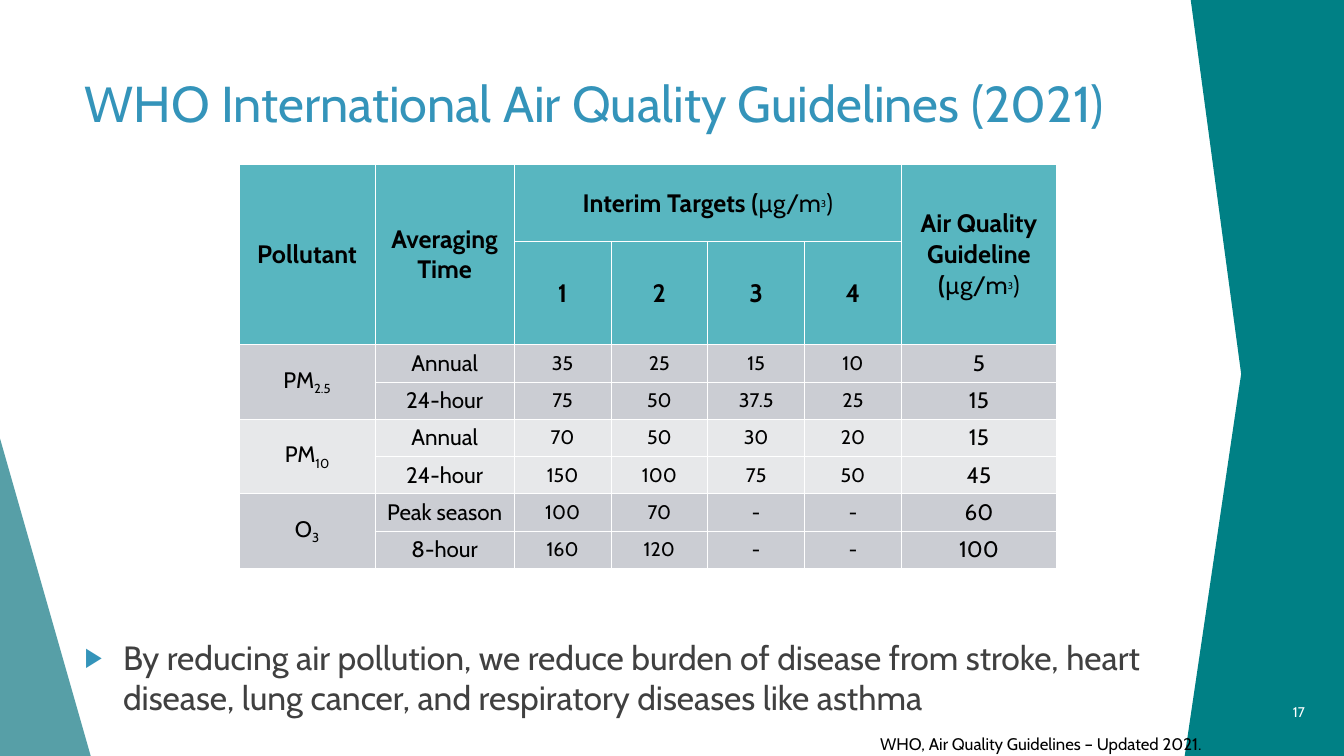
from lxml.etree import SubElement
from pptx import Presentation
from pptx.dml.color import RGBColor
from pptx.enum.shapes import MSO_SHAPE
from pptx.enum.text import MSO_ANCHOR, MSO_AUTO_SIZE, PP_ALIGN
from pptx.oxml.ns import qn
from pptx.util import Inches, Pt

FONT = "Cabin"
BLUE = RGBColor(0x34, 0x94, 0xBA)
TEAL = RGBColor(0x00, 0x80, 0x85)
SOFT_TEAL = RGBColor(0x3A, 0x8F, 0x98)
HEADER = RGBColor(0x58, 0xB6, 0xC0)
GREY = RGBColor(0xCB, 0xCD, 0xD3)
LIGHT_GREY = RGBColor(0xE7, 0xE8, 0xEA)
DARK = RGBColor(0x40, 0x40, 0x40)
BLACK = RGBColor(0, 0, 0)
WHITE = RGBColor(0xFF, 0xFF, 0xFF)

COL_WIDTHS = [1.35, 1.38, 0.96, 0.96, 0.96, 0.96, 1.54]
ROW_HEIGHTS = [0.77, 1.02] + [0.37] * 6
VALUE_SIZES = [16] + [14] * 4 + [16]
POLLUTANTS = [
    ("PM", "2.5", GREY, [["Annual", "35", "25", "15", "10", "5"],
                         ["24-hour", "75", "50", "37.5", "25", "15"]]),
    ("PM", "10", LIGHT_GREY, [["Annual", "70", "50", "30", "20", "15"],
                              ["24-hour", "150", "100", "75", "50", "45"]]),
    ("O", "3", GREY, [["Peak season", "100", "70", "-", "-", "60"],
                      ["8-hour", "160", "120", "-", "-", "100"]]),
]


def style_run(r, size, color, bold=False, baseline=0):
    r.font.name = FONT
    r.font.size = Pt(size)
    r.font.color.rgb = color
    r.font.bold = bold
    if baseline:
        r.font._element.set("baseline", str(baseline * 1000))


def place(shape, left, top, width, height):
    shape.left, shape.top = Inches(left), Inches(top)
    shape.width, shape.height = Inches(width), Inches(height)


def fill_text(shape, text, size, color, anchor=MSO_ANCHOR.TOP, align=PP_ALIGN.LEFT):
    tf = shape.text_frame
    tf.text = text
    tf.word_wrap = True
    tf.auto_size = MSO_AUTO_SIZE.NONE
    tf.vertical_anchor = anchor
    p = tf.paragraphs[0]
    p.alignment = align
    p.space_before = Pt(0)
    style_run(p.runs[0], size, color)
    return p


def add_label(s, box, *text_format):
    fill_text(s.shapes.add_textbox(*map(Inches, box)), *text_format)


def set_bullet(p, char, color, percent, indent):
    pPr = p._p.get_or_add_pPr()
    pPr.set("marL", str(Inches(indent)))
    pPr.set("indent", str(-Inches(indent)))
    clr = SubElement(pPr, qn("a:buClr"))
    SubElement(clr, qn("a:srgbClr"), val=str(color))
    SubElement(pPr, qn("a:buSzPct"), val=str(percent * 1000))
    SubElement(pPr, qn("a:buFont"), typeface="Arial")
    SubElement(pPr, qn("a:buChar"), char=char)


def send_behind(shape, front, color):
    """Colour a decoration and put it below the front shape."""
    shape.shadow.inherit = False
    shape.fill.solid()
    shape.fill.fore_color.rgb = color
    shape.line.fill.background()
    front._element.addprevious(shape._element)


def add_decorations(s):
    wedge = s.shapes.add_shape(MSO_SHAPE.ISOSCELES_TRIANGLE, Inches(-0.02), Inches(4.28),
                               Inches(0.92), Inches(3.22))
    wedge.adjustments[0] = 0
    send_behind(wedge, s.shapes.title, SOFT_TEAL)
    tint = wedge._element.spPr.find(qn("a:solidFill"))[0]
    SubElement(tint, qn("a:alpha"), val="85000")

    outline = [(13.33, 0), (13.33, 7.5), (11.75, 7.5), (12.31, 3.71), (11.81, 0)]
    start, *rest = [(Inches(x), Inches(y)) for x, y in outline]
    builder = s.shapes.build_freeform(*start)
    builder.add_line_segments(rest)
    send_behind(builder.convert_to_shape(), s.shapes.title, TEAL)


def set_borders(cell):
    tcPr = cell._tc.get_or_add_tcPr()
    for i, side in enumerate(("lnL", "lnR", "lnT", "lnB")):
        ln = SubElement(tcPr, qn(f"a:{side}"), w=str(Pt(0.67)))
        fill = SubElement(ln, qn("a:solidFill"))
        SubElement(fill, qn("a:srgbClr"), val=str(WHITE))
        tcPr.insert(i, ln)


def fill_cell(cell, *parts):
    """Write runs given as (text, size, bold, baseline)."""
    cell.vertical_anchor = MSO_ANCHOR.MIDDLE
    p = cell.text_frame.paragraphs[0]
    p.alignment = PP_ALIGN.CENTER
    for text, size, *rest in parts:
        r = p.add_run()
        r.text = text
        style_run(r, size, BLACK, *rest)


def add_guideline_table(s):
    frame = s.shapes.add_table(len(ROW_HEIGHTS), len(COL_WIDTHS), Inches(2.37), Inches(1.63),
                               Inches(sum(COL_WIDTHS)), Inches(sum(ROW_HEIGHTS)))
    table = frame.table
    table.first_row = table.horz_banding = False
    for col, width in zip(table.columns, COL_WIDTHS):
        col.width = Inches(width)
    for row, height in zip(table.rows, ROW_HEIGHTS):
        row.height = Inches(height)

    row_fills = [HEADER] * 2 + [fill for *_, fill, _ in POLLUTANTS for _ in range(2)]
    for row, fill in zip(table.rows, row_fills):
        for cell in row.cells:
            cell.fill.solid()
            cell.fill.fore_color.rgb = fill
            set_borders(cell)

    for col in (0, 1, 6):
        table.cell(0, col).merge(table.cell(1, col))
    table.cell(0, 2).merge(table.cell(0, 5))
    unit = [("µg/m", 18), ("3", 12, False, 30), (")", 18)]
    fill_cell(table.cell(0, 0), ("Pollutant", 18, True))
    fill_cell(table.cell(0, 1), ("Averaging Time", 18, True))
    fill_cell(table.cell(0, 2), ("Interim Targets (", 18, True), *unit)
    fill_cell(table.cell(0, 6), ("Air Quality Guideline (", 18, True), *unit)
    for target in range(1, 5):
        fill_cell(table.cell(1, target + 1), (str(target), 18, True))

    for i, (name, subscript, _, records) in enumerate(POLLUTANTS):
        top = 2 + 2 * i
        table.cell(top, 0).merge(table.cell(top + 1, 0))
        fill_cell(table.cell(top, 0), (name, 16), (subscript, 16, False, -25))
        for row, record in enumerate(records, top):
            for col, part in enumerate(zip(record, VALUE_SIZES), 1):
                fill_cell(table.cell(row, col), part)


def main():
    prs = Presentation()
    prs.slide_width, prs.slide_height = Inches(13.33), Inches(7.5)
    s = prs.slides.add_slide(prs.slide_layouts[1])
    title, body = s.placeholders
    add_decorations(s)

    place(title, 0.74, 0.67, 11.92, 1.44)
    fill_text(title, "WHO International Air Quality Guidelines (2021)", 36, BLUE)
    add_guideline_table(s)

    place(body, 0.74, 6.27, 11.36, 2.19)
    p = fill_text(body, "By reducing air pollution, we reduce burden of disease from stroke, heart "
                  "disease, lung cancer, and respiratory diseases like asthma", 24, DARK)
    set_bullet(p, "▶", BLUE, 80, 0.38)

    add_label(s, (8.63, 7.23, 3.74, 0.3), "WHO, Air Quality Guidelines – Updated 2021.", 12, BLACK)
    add_label(s, (12.29, 6.86, 0.75, 0.4), "17", 10, WHITE, MSO_ANCHOR.MIDDLE, PP_ALIGN.RIGHT)
    prs.save("out.pptx")


if __name__ == "__main__":
    main()
